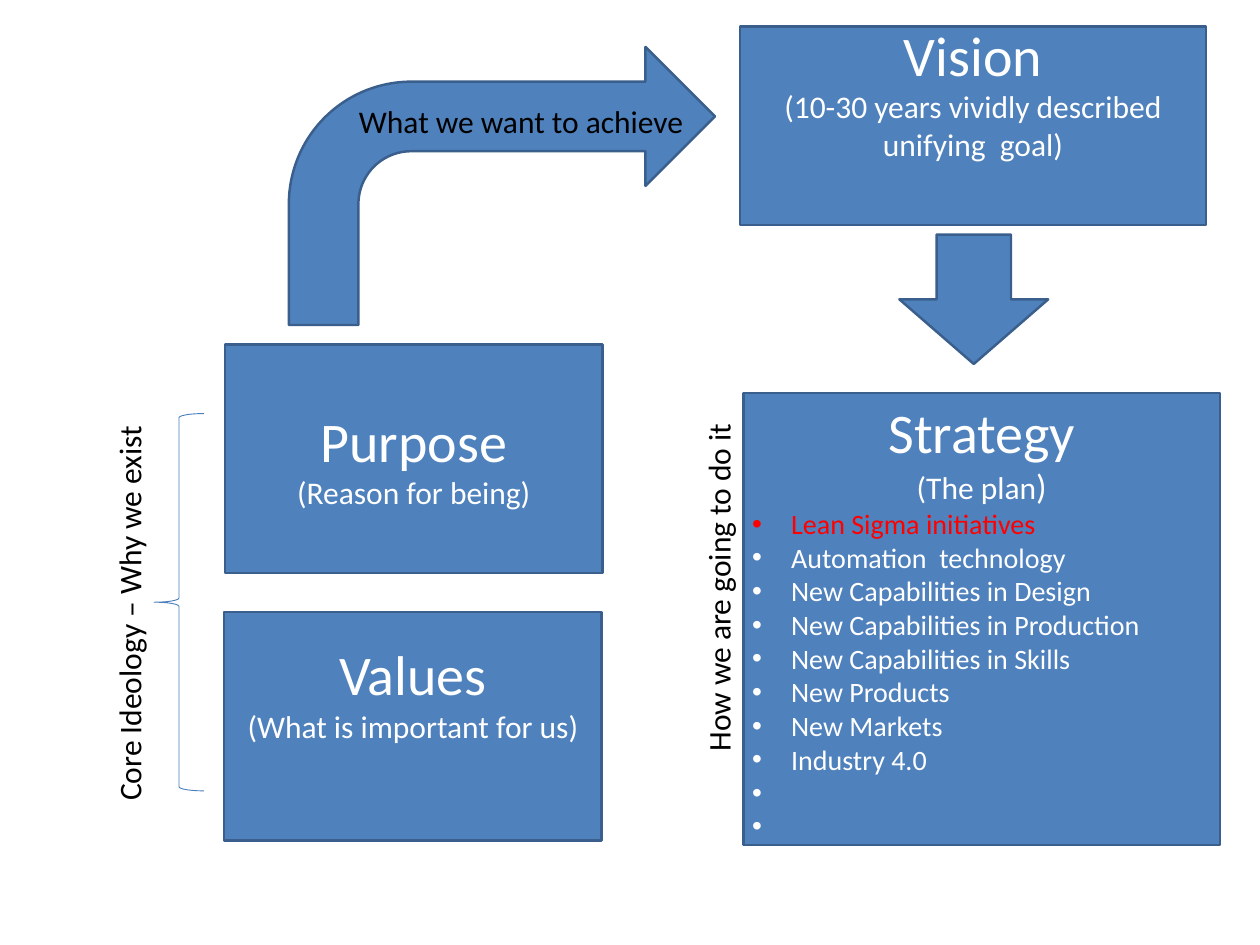
from lxml import etree
from pptx import Presentation
from pptx.dml.color import RGBColor
from pptx.enum.shapes import MSO_SHAPE
from pptx.enum.text import MSO_ANCHOR, PP_ALIGN
from pptx.oxml.ns import qn
from pptx.util import Inches, Pt

RECT, BRACE = MSO_SHAPE.RECTANGLE, MSO_SHAPE.LEFT_BRACE
BENT, DOWN = MSO_SHAPE.BENT_ARROW, MSO_SHAPE.DOWN_ARROW
TOP, MIDDLE = MSO_ANCHOR.TOP, MSO_ANCHOR.MIDDLE
LEFT, CENTER = PP_ALIGN.LEFT, PP_ALIGN.CENTER

COLORS = {"fill": "4F81BD", "edge": "3A5F8C", "brace": "4B7EBC",
          "white": "FFFFFF", "black": "000000", "red": "FF0000"}
FONT = "Calibri"
HEAD, BODY, ITEM, PAREN = 45.5, 25.6, 22.8, 28.4
INDENT = 0.44
PAD = 0.77  # height of one heading line, kept free under the text

GOALS = ["Lean Sigma initiatives", "Automation  technology",
         "New Capabilities in Design", "New Capabilities in Production",
         "New Capabilities in Skills", "New Products", "New Markets",
         "Industry 4.0"]
OPEN = 2  # bullets still to be filled in


def color(name):
    return RGBColor.from_string(COLORS[name])


class Board:
    def __init__(self, slide):
        self.slide = slide

    def shape(self, kind, box, fill="fill", line="edge", width=2):
        item = self.slide.shapes.add_shape(kind, *map(Inches, box))
        item.shadow.inherit = False
        if fill:
            item.fill.solid()
            item.fill.fore_color.rgb = color(fill)
        else:
            item.fill.background()
        item.line.color.rgb = color(line)
        item.line.width = Pt(width)
        return item

    def style(self, para, size, ink="white", align=CENTER):
        para.alignment = align
        for run in para.runs:
            run.font.name = FONT
            run.font.size = Pt(size)
            run.font.color.rgb = color(ink)

    def card(self, box, title, note, anchor=MIDDLE, pad=0):
        """Draw a box with a heading and a line below it."""
        frame = self.shape(RECT, box).text_frame
        frame.word_wrap = True
        frame.vertical_anchor = anchor
        frame.margin_bottom = Inches(0.05 + pad)
        frame.text = f"{title}\n{note}"
        for para, size in zip(frame.paragraphs, (HEAD, BODY)):
            self.style(para, size)
        return frame

    def bullet(self, frame, text, ink="white"):
        para = frame.add_paragraph()
        para.text = text
        self.style(para, ITEM, ink, LEFT)
        props = para._p.get_or_add_pPr()
        props.set("marL", str(Inches(INDENT)))
        props.set("indent", str(-Inches(INDENT)))
        etree.SubElement(props, qn("a:buFont")).set("typeface", "Arial")
        etree.SubElement(props, qn("a:buChar")).set("char", "•")

    def label(self, box, text, align=LEFT, turn=0):
        item = self.slide.shapes.add_textbox(*map(Inches, box))
        item.rotation = turn
        frame = item.text_frame
        frame.word_wrap = True
        frame.text = text
        self.style(frame.paragraphs[0], BODY, "black", align)


def main():
    deck = Presentation()
    deck.slide_width, deck.slide_height = Inches(14.22), Inches(10.67)
    board = Board(deck.slides.add_slide(deck.slide_layouts[6]))

    board.card((2.54, 3.89, 4.26, 2.58), "Purpose", "(Reason for being)")
    board.card((2.53, 6.91, 4.26, 2.58), "Values",
               "(What is important for us)", pad=PAD)
    board.card((8.35, 0.3, 5.26, 2.24), "Vision",
               "(10-30 years vividly described unifying  goal)", pad=PAD)

    bend = board.shape(BENT, (3.26, 0.53, 4.81, 3.14))
    for index, value in enumerate((0.25, 0.25, 0.25, 0.44)):
        bend.adjustments[index] = value

    plan = board.card((8.39, 4.44, 5.38, 5.1), "Strategy", "(The plan", TOP)
    note = plan.paragraphs[1]
    note.add_run().text = ")"
    board.style(note, BODY)
    note.runs[-1].font.size = Pt(PAREN)
    for index, goal in enumerate(GOALS + [" "] * OPEN):
        board.bullet(plan, goal, "white" if index else "red")

    board.shape(BRACE, (1.74, 4.67, 0.56, 4.26), None, "brace", 0.75)
    board.shape(DOWN, (10.15, 2.65, 1.68, 1.46))

    board.label((-1.4, 6.02, 5.71, 0.53), "Core Ideology – Why we exist",
                turn=270)
    board.label((2.74, 1.1, 6.28, 0.53), "What we want to achieve", CENTER)
    board.label((5.25, 5.46, 5.71, 0.53), "How we are going to do it",
                turn=270)
    deck.save("out.pptx")


if __name__ == "__main__":
    main()
